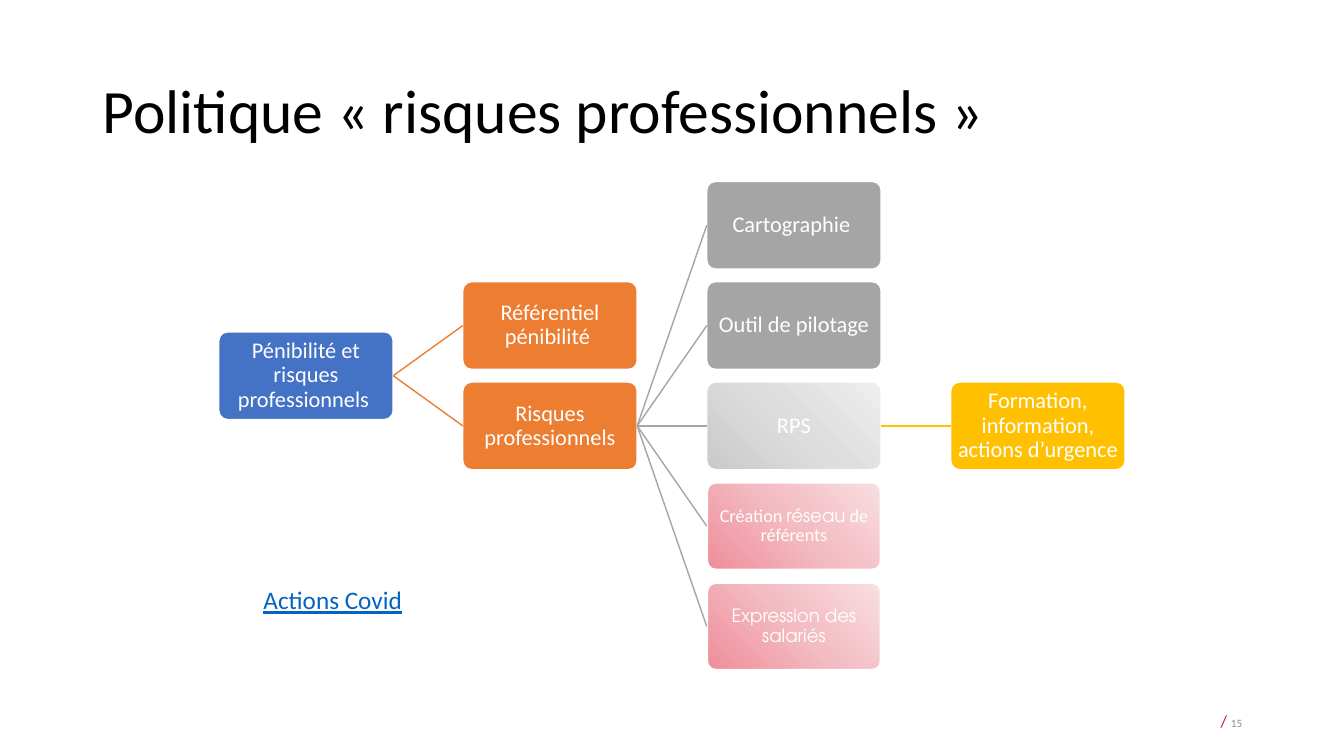
from lxml import etree
from pptx import Presentation
from pptx import util as u
from pptx.dml.color import RGBColor
from pptx.enum import shapes, text
from pptx.oxml import parse_xml
from pptx.oxml.ns import nsdecls, qn

COLORS = {
    "black": "000000", "white": "FFFFFF", "blue": "4472C4", "orange": "ED7D31",
    "gray": "A5A5A5", "gold": "FFC000", "link": "0563C1", "crimson": "C8004C",
    "number": "8C8C8C",
}
GRADIENTS = {
    "silver": ("CACACA", "DDDDDD", "EEEEEE"),
    "pink": ("EF8D9A", "F3BBC2", "F8DEE1"),
}
BODY, ALT = "Calibri", "TeX Gyre Adventor"
LEFT, TOP, COL, ROW = 2.17, 1.8, 2.42, 0.995
BOX_W, BOX_H = 1.73, 0.87
ALIGN, ANCHOR = text.PP_ALIGN, text.MSO_ANCHOR


class RiskSlide:
    """Draws the risk policy tree on one slide, with boxes placed by column and row."""

    def __init__(self, prs):
        self.s = prs.slides.add_slide(prs.slide_layouts[6])

    def color(self, name):
        return RGBColor.from_string(COLORS[name])

    def style(self, font, size, color, name=BODY):
        font.size, font.name = u.Pt(size), name
        font.color.rgb = self.color(color)

    def label(self, at, words, size, color, align=ALIGN.LEFT, anchor=ANCHOR.MIDDLE):
        tf = self.s.shapes.add_textbox(*map(u.Inches, at)).text_frame
        tf.word_wrap, tf.vertical_anchor = True, anchor
        p = tf.paragraphs[0]
        p.text, p.alignment = words, align
        self.style(p.font, size, color)
        return p

    def gradient(self, sp, name):
        stops = "".join(
            f'<a:gs pos="{i * 50000}"><a:srgbClr val="{c}"/></a:gs>'
            for i, c in enumerate(GRADIENTS[name]))
        fill = parse_xml(
            f'<a:gradFill {nsdecls("a")} rotWithShape="1"><a:gsLst>{stops}</a:gsLst>'
            '<a:path path="circle"><a:fillToRect t="100000" r="100000"/></a:path>'
            '</a:gradFill>')
        sp._element.spPr.find(qn("a:prstGeom")).addnext(fill)

    def box(self, col, row, fill, runs, size=16, border=1):
        at = (LEFT + col * COL, TOP + row * ROW, BOX_W, BOX_H)
        sp = self.s.shapes.add_shape(
            shapes.MSO_SHAPE.ROUNDED_RECTANGLE, *map(u.Inches, at))
        sp.adjustments[0] = 0.1
        sp.shadow.inherit = False
        if fill in GRADIENTS:
            self.gradient(sp, fill)
        else:
            sp.fill.solid()
            sp.fill.fore_color.rgb = self.color(fill)
        sp.line.color.rgb, sp.line.width = self.color("white"), u.Pt(border)
        tf = sp.text_frame
        tf.word_wrap, tf.vertical_anchor = True, ANCHOR.MIDDLE
        tf.margin_left = tf.margin_right = u.Inches(0.03)
        tf.margin_top = tf.margin_bottom = u.Inches(0.03)
        p = tf.paragraphs[0]
        p.alignment, p.line_spacing = ALIGN.CENTER, 0.9
        self.style(p.font, size, "white", runs[0][1])
        for words, name in runs:
            r = p.add_run()
            r.text = words
            if name != runs[0][1]:
                r.font.name = name
        return sp

    def link(self, parent, child, color):
        sp = self.s.shapes.add_connector(shapes.MSO_CONNECTOR.STRAIGHT, 0, 0, 0, 0)
        sp.begin_connect(parent, 3)
        sp.end_connect(child, 1)
        sp.line.color.rgb, sp.line.width = self.color(color), u.Pt(1)
        etree.SubElement(sp._element.spPr, qn("a:effectLst"))


def main():
    prs = Presentation()
    prs.slide_width, prs.slide_height = u.Inches(13.33), u.Inches(7.5)
    slide = RiskSlide(prs)

    title = slide.label((0.92, 0.4, 11.5, 1.45),
                        "Politique « risques professionnels »", 44, "black")
    title.line_spacing = 0.9

    root = slide.box(0, 1.5, "blue", [("Pénibilité et risques professionnels ", BODY)])
    reference = slide.box(1, 1, "orange", [("Référentiel pénibilité ", BODY)])
    risks = slide.box(1, 2, "orange", [("Risques professionnels", BODY)])
    for child in (reference, risks):
        slide.link(root, child, "orange")

    actions = [
        ("gray", [("Cartographie ", BODY)], 16, 1),
        ("gray", [("Outil de pilotage", BODY)], 16, 1),
        ("silver", [("RPS", BODY)], 16, 1),
        ("pink", [("Création ", BODY), ("réseau", ALT), (" de référents", BODY)], 13, 2),
        ("pink", [("Expression des salariés", ALT)], 13, 2),
    ]
    boxes = [slide.box(2, row, *action) for row, action in enumerate(actions)]
    for child in boxes:
        slide.link(risks, child, "gray")
    training = slide.box(3, 2, "gold",
                         [("Formation, information, actions d’urgence", BODY)])
    slide.link(boxes[2], training, "gold")

    number = slide.label((9.42, 6.95, 3, 0.4), "/ ", 12, "crimson", ALIGN.RIGHT)
    r = number.add_run()
    r.text = "15"
    slide.style(r.font, 8, "number")

    covid = slide.label((2.36, 5.75, 1.88, 0.4), "Actions Covid", 18, "link",
                        ALIGN.CENTER, ANCHOR.TOP)
    covid.font.underline = True
    prs.save("out.pptx")


if __name__ == "__main__":
    main()
